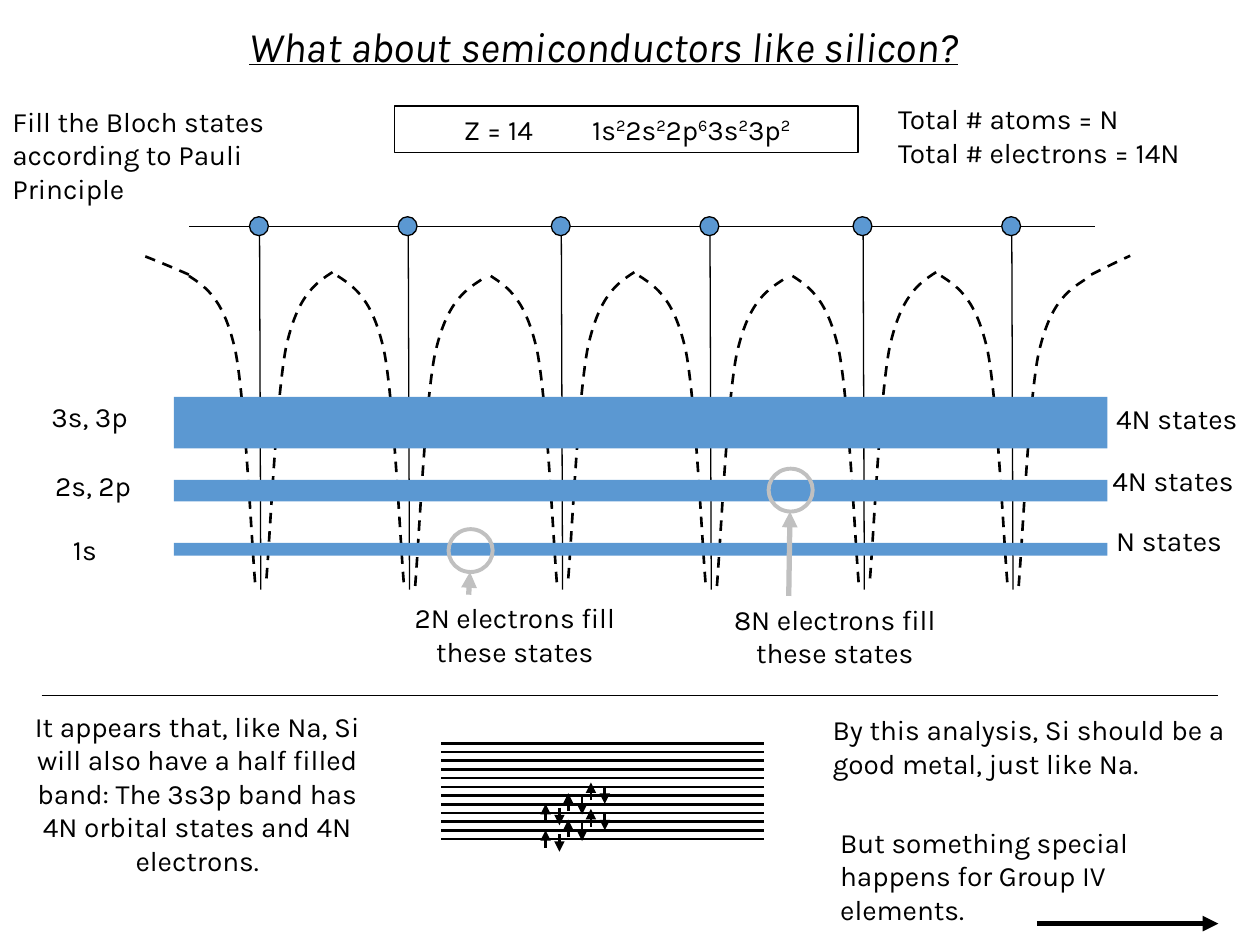
from lxml import etree
from pptx import Presentation
from pptx.dml.color import RGBColor
from pptx.enum.dml import MSO_LINE
from pptx.enum.shapes import MSO_CONNECTOR, MSO_SHAPE
from pptx.enum.text import MSO_ANCHOR, PP_ALIGN
from pptx.oxml.ns import qn
from pptx.util import Inches, Pt

LEFT, CENTER, MIDDLE = PP_ALIGN.LEFT, PP_ALIGN.CENTER, MSO_ANCHOR.MIDDLE
RECT, OVAL = MSO_SHAPE.RECTANGLE, MSO_SHAPE.OVAL
STRAIGHT, DASH = MSO_CONNECTOR.STRAIGHT, MSO_LINE.DASH
FONT, BLACK, BLUE, GREY = "Karla", "000000", "5B98D2", "C0C0C0"
BODY = {"name": FONT, "size": Pt(16)}
TITLE = {"name": FONT, "size": Pt(24), "italic": True, "underline": True}


def rgb(value):
    return RGBColor.from_string(value)


def add_run(p, text, fmt=BODY):
    r = p.add_run()
    r.text = text
    for name, value in fmt.items():
        setattr(r.font, name, value)
    r.font.color.rgb = rgb(BLACK)
    return r


def add_text(s, x, y, w, h, text, align=LEFT, fmt=BODY, wrap=True):
    """Add a text box; each line of text after the first follows a line break."""
    tf = s.shapes.add_textbox(Inches(x), Inches(y), Inches(w), Inches(h)).text_frame
    tf.word_wrap = wrap
    p = tf.paragraphs[0]
    p.alignment = align
    for i, line in enumerate(text.split("\n")):
        if i:
            p.add_line_break()
        add_run(p, line, fmt)


def add_line(s, x1, y1, x2, y2, width=0.75, color=BLACK, arrow=False):
    c = s.shapes.add_connector(STRAIGHT, Inches(x1), Inches(y1), Inches(x2), Inches(y2))
    c.line.width = Pt(width)
    c.line.color.rgb = rgb(color)
    if arrow:
        etree.SubElement(c.line._get_or_add_ln(), qn("a:tailEnd"), type="triangle")
    etree.SubElement(c._element.spPr, qn("a:effectLst"))


def add_shape(s, kind, x, y, w, h, fill=None, line=None, width=0.75):
    sp = s.shapes.add_shape(kind, Inches(x), Inches(y), Inches(w), Inches(h))
    sp.shadow.inherit = False
    if fill:
        sp.fill.solid()
        sp.fill.fore_color.rgb = rgb(fill)
    else:
        sp.fill.background()
    if line:
        sp.line.color.rgb = rgb(line)
        sp.line.width = Pt(width)
    else:
        sp.line.fill.background()
    return sp


def add_curve(s, points):
    """Draw a dashed cubic Bezier chain: a start, then three points per segment."""
    pts = [(Inches(x), Inches(y)) for x, y in points]
    builder = s.shapes.build_freeform(*pts[0], scale=1.0)
    builder.add_line_segments(pts[1:], close=False)
    sp = builder.convert_to_shape()
    steps = list(sp._element.iter(qn("a:lnTo")))
    for i in range(0, len(steps), 3):
        bezier = etree.Element(qn("a:cubicBezTo"))
        steps[i].addprevious(bezier)
        for step in steps[i:i + 3]:
            bezier.append(step[0])
            step.getparent().remove(step)
    sp.shadow.inherit = False
    sp.fill.background()
    sp.line.color.rgb = rgb(BLACK)
    sp.line.width = Pt(1.5)
    sp.line.dash_style = DASH


def add_flank(s, x, y, side):
    """Draw one side of a well from its top; side is 1 when it falls rightwards."""
    steps = [(0, 0), (0.14, 0.09), (0.28, 0.19), (0.37, 0.6),
             (0.45, 1.02), (0.5, 2.18), (0.53, 2.49)]
    add_curve(s, [(x + side * dx, y + dy) for dx, dy in steps])


def add_configuration(s, x, y, w, h):
    box = add_shape(s, RECT, x, y, w, h, line=BLACK, width=1)
    tf = box.text_frame
    tf.vertical_anchor = MIDDLE
    tf.margin_left = Inches(0.55)
    p = tf.paragraphs[0]
    p.alignment = LEFT
    tabs = etree.SubElement(p._p.get_or_add_pPr(), qn("a:tabLst"))
    etree.SubElement(tabs, qn("a:tab"), pos=str(Inches(1.02)), algn="l")
    add_run(p, "Z = 14\t")
    for shell, count in (("1s", 2), ("2s", 2), ("2p", 6), ("3s", 2), ("3p", 2)):
        add_run(p, shell)
        r = add_run(p, str(count))
        r.font._element.set("baseline", "30000")


def add_lattice(s, x, y, w):
    """Draw six atoms on an axis starting at (x, y), with their potential wells."""
    wells = [(x + 0.56 + 2.395 * pair + 1.18 * odd, odd)
             for pair in range(3) for odd in (0, 1)]
    for cx, odd in wells:
        add_flank(s, cx - 0.56, y + 0.39, 1)
        add_flank(s, cx + 0.58, y + 0.36 + 0.06 * odd, -1)
    for start, end in ((x, x - 0.36), (x + w - 0.03, x + w + 0.28)):
        add_curve(s, [(start, y + 0.38), (start, y + 0.38),
                      ((start + end) / 2, y + 0.3), (end, y + 0.23)])
    add_line(s, x, y, x + w, y)
    for cx, _ in wells:
        add_line(s, cx, y, cx + 0.01, y + 2.88)
        add_shape(s, OVAL, cx - 0.08, y - 0.08, 0.15, 0.15, BLUE, BLACK)


def add_bands(s, x, y, w):
    bands = [  # offset, height, level, level x, level y, count, count x, count y
        (1.16, 0.1, "1s", 0.48, 4.18, "N states", 8.76, 4.11),
        (0.66, 0.17, "2s, 2p", 0.34, 3.67, "4N states", 8.73, 3.63),
        (0, 0.41, "3s, 3p", 0.31, 3.12, "4N states", 8.76, 3.14)]
    for dy, h, level, lx, ly, count, cx, cy in bands:
        add_shape(s, RECT, x, y + dy, w, h, BLUE)
        add_text(s, lx, ly, 1.13, 0.4, level)
        add_text(s, cx, cy, 1.26, 0.4, count)


def add_callout(s, x, y, ring_y, text):
    """Place a caption at (x, y) whose arrow points up at a ring."""
    add_shape(s, OVAL, x + 0.52, ring_y, 0.35, 0.34, line=GREY, width=2.25)
    add_text(s, x, y, 2.09, 0.7, text, CENTER)
    add_line(s, x + 0.68, y, x + 0.69, ring_y + 0.34, 3, GREY, True)


def add_half_filled_band(s, x, y, w, h, levels=12):
    for i in range(levels):
        level_y = y + i * h / (levels - 1)
        add_line(s, x, level_y, x + w, level_y, 1.5)
    for row in range(2):
        for i in range(3):
            up_x, top = x + 1.19 - 0.18 * i, y + 0.31 + 0.21 * row + 0.085 * i
            add_line(s, up_x, top + 0.14, up_x, top, 1.5, arrow=True)
            add_line(s, up_x + 0.11, top + 0.03, up_x + 0.11, top + 0.17, 1.5, arrow=True)


def add_conclusions(s, x, y, w):
    add_line(s, x, y, x + w, y)
    add_text(s, 0.17, y + 0.06, 2.79, 1.9,
             "It appears that, like Na, Si will also have a half filled band: "
             "The 3s3p band has 4N orbital states and 4N electrons.", CENTER)
    add_half_filled_band(s, 3.5, y + 0.38, 2.56, 0.76)
    add_text(s, 6.51, y + 0.09, 3.49, 0.7,
             "By this analysis, Si should be a good metal, just like Na.")
    add_text(s, 6.57, y + 0.98, 2.94, 1,
             "But something special happens for Group IV elements.")
    add_line(s, 8.23, y + 1.81, x + w, y + 1.81, 3, arrow=True)


def main():
    prs = Presentation()
    prs.slide_width, prs.slide_height = Inches(10), Inches(7.5)
    s = prs.slides.add_slide(prs.slide_layouts[6])
    add_text(s, 1.88, 0.11, 6.22, 0.5, "What about semiconductors like silicon?",
             fmt=TITLE, wrap=False)
    add_text(s, 0, 0.78, 2.89, 1, "Fill the Bloch states according to Pauli Principle")
    add_configuration(s, 3.13, 0.84, 3.68, 0.37)
    add_text(s, 7.03, 0.76, 2.89, 0.7, "Total # atoms = N\nTotal # electrons = 14N")
    add_lattice(s, 1.5, 1.8, 7.19)
    add_bands(s, 1.38, 3.15, 7.41)
    add_callout(s, 3.04, 4.72, 4.2, "2N electrons fill these states")
    add_callout(s, 5.58, 4.73, 3.72, "8N electrons fill these states")
    add_conclusions(s, 0.33, 5.52, 9.34)
    prs.save("out.pptx")


if __name__ == "__main__":
    main()
